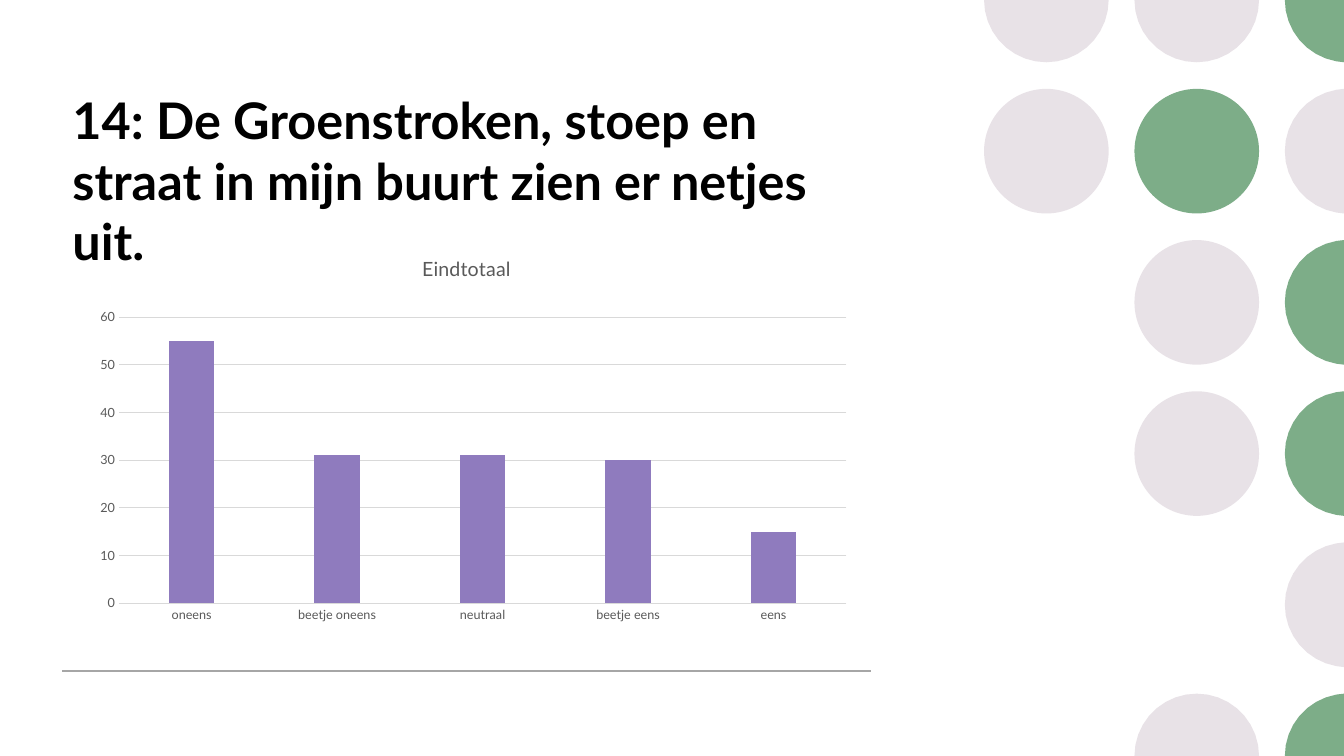
from math import cos, pi, sin

from lxml.etree import SubElement
from pptx import Presentation
from pptx.chart.data import CategoryChartData
from pptx.dml.color import RGBColor
from pptx.enum.chart import XL_CHART_TYPE, XL_TICK_MARK
from pptx.enum.shapes import MSO_CONNECTOR, MSO_SHAPE
from pptx.enum.text import MSO_ANCHOR, MSO_AUTO_SIZE, PP_ALIGN
from pptx.oxml.ns import qn
from pptx.util import Cm, Pt

WIDTH, HEIGHT = 33.87, 19.05
LEFT, CONTENT_WIDTH = 1.57, 20.37
BLACK, DARK_GREY, GREY, PALE_GREY = "000000", "595959", "A6A6A6", "D9D9D9"
PURPLE, GREEN, PINK = "8F7BBE", "7DAD88", "E8E2E7"

DOT_RADIUS, DOT_COLUMN_STEP, DOT_ROW_STEP = 1.57, 3.79, 3.81
FIRST_DOT_X = 26.37
ARC_STEPS = 18
# One string per row from the top edge: p = pink, g = green, . = no dot
DOT_ROWS = ["ppg", "pgp", ".pg", ".pg", "..p", ".pg"]
DOT_COLORS = {"p": PINK, "g": GREEN}

ANSWERS = {"oneens": 55, "beetje oneens": 31, "neutraal": 31, "beetje eens": 30, "eens": 15}


def color(hex_string):
    return RGBColor.from_string(hex_string)


def write_text(frame, text, size, ink, font="Lato", bold=False, align=None):
    """Fill the first paragraph of a text frame with one formatted run."""
    para = frame.paragraphs[0]
    para.alignment = align
    span = para.add_run()
    span.text = text
    format_font(span.font, size, ink, font, bold)


def format_font(font, size, ink, name="Lato", bold=False):
    font.name, font.size, font.bold = name, Pt(size), bold
    font.color.rgb = color(ink)


def format_line(line, ink, width):
    line.color.rgb = color(ink)
    line.width = Pt(width)


def half_disc(x, y, radius):
    """Return the points of the half disc that faces into the slide, kept within its edges."""
    if x + radius > WIDTH:
        start = pi / 2
    else:
        start = 0 if y < radius else pi
    angles = [start + pi * step / ARC_STEPS for step in range(ARC_STEPS + 1)]
    return [(Cm(min(x + radius * cos(angle), WIDTH)),
             Cm(min(max(y + radius * sin(angle), 0), HEIGHT))) for angle in angles]


class SlideBuilder:
    def __init__(self, page, font="Lato"):
        self.page = page
        self.font = font

    def title(self, text, left, top, width, height):
        box = self.page.shapes.title
        box.left, box.top, box.width, box.height = map(Cm, (left, top, width, height))
        frame = box.text_frame
        frame.word_wrap = True
        frame.auto_size = MSO_AUTO_SIZE.NONE
        frame.vertical_anchor = MSO_ANCHOR.TOP
        write_text(frame, text, 36, BLACK, font=self.font, bold=True, align=PP_ALIGN.LEFT)

    def dot(self, x, y, radius, fill):
        """Draw a dot around (x, y), cut off where it crosses a slide edge."""
        shapes = self.page.shapes
        if radius <= x <= WIDTH - radius and radius <= y <= HEIGHT - radius:
            dot = shapes.add_shape(MSO_SHAPE.OVAL, Cm(x - radius), Cm(y - radius),
                                   Cm(2 * radius), Cm(2 * radius))
        else:
            points = half_disc(x, y, radius)
            outline = shapes.build_freeform(*points[0])
            outline.add_line_segments(points[1:], close=True)
            dot = outline.convert_to_shape()
        dot.shadow.inherit = False
        dot.fill.solid()
        dot.fill.fore_color.rgb = color(fill)
        dot.line.fill.background()

    def rule(self, left, top, width):
        rule = self.page.shapes.add_connector(MSO_CONNECTOR.STRAIGHT, Cm(left), Cm(top),
                                              Cm(left + width), Cm(top))
        format_line(rule.line, GREY, 1)
        SubElement(rule._element.spPr, qn("a:effectLst"))

    def column_chart(self, name, values, left, top, width, height):
        data = CategoryChartData()
        data.categories = list(values)
        data.add_series(name, list(values.values()))
        chart = self.page.shapes.add_chart(XL_CHART_TYPE.COLUMN_CLUSTERED, Cm(left), Cm(top),
                                           Cm(width), Cm(height), data).chart
        format_font(chart.font, 10, BLACK, self.font)
        chart.has_legend = False
        chart.has_title = True
        write_text(chart.chart_title.text_frame, name, 14, DARK_GREY, font=self.font)

        plot = chart.plots[0]
        plot.gap_width, plot.overlap, plot.vary_by_categories = 219, -27, False
        bars = plot.series[0].format.fill
        bars.solid()
        bars.fore_color.rgb = color(PURPLE)

        for axis in (chart.category_axis, chart.value_axis):
            axis.major_tick_mark = axis.minor_tick_mark = XL_TICK_MARK.NONE
            format_font(axis.tick_labels.font, 9, DARK_GREY, self.font)
        format_line(chart.category_axis.format.line, PALE_GREY, 0.75)
        scale = chart.value_axis
        scale.minimum_scale, scale.maximum_scale, scale.major_unit = 0, 60, 10
        scale.format.line.fill.background()
        format_line(scale.major_gridlines.format.line, PALE_GREY, 0.75)
        self.place_plot(chart, x=0.07, y=0.2, w=0.9, h=0.72)

    def place_plot(self, chart, **fractions):
        """Fix the inner plot area as fractions of the chart."""
        area = chart._chartSpace.chart.plotArea
        layout = area.find(qn("c:layout"))
        if layout is None:
            layout = SubElement(area, qn("c:layout"))
            area.insert(0, layout)
        manual = SubElement(layout, qn("c:manualLayout"))
        settings = {"layoutTarget": "inner", "xMode": "edge", "yMode": "edge", **fractions}
        for tag, value in settings.items():
            SubElement(manual, qn(f"c:{tag}")).set("val", str(value))


def main():
    deck = Presentation()
    deck.slide_width, deck.slide_height = Cm(WIDTH), Cm(HEIGHT)
    builder = SlideBuilder(deck.slides.add_slide(deck.slide_layouts[5]))

    for row, marks in enumerate(DOT_ROWS):
        for column, mark in enumerate(marks):
            if mark in DOT_COLORS:
                builder.dot(FIRST_DOT_X + column * DOT_COLUMN_STEP, row * DOT_ROW_STEP,
                            DOT_RADIUS, DOT_COLORS[mark])

    builder.rule(LEFT, 16.91, CONTENT_WIDTH)
    builder.title("14: De Groenstroken, stoep en straat in mijn buurt zien er netjes uit.",
                  LEFT, 2.13, CONTENT_WIDTH, 3.53)
    builder.column_chart("Eindtotaal", ANSWERS, LEFT, 5.99, CONTENT_WIDTH, 10.01)
    deck.save("out.pptx")


if __name__ == "__main__":
    main()
